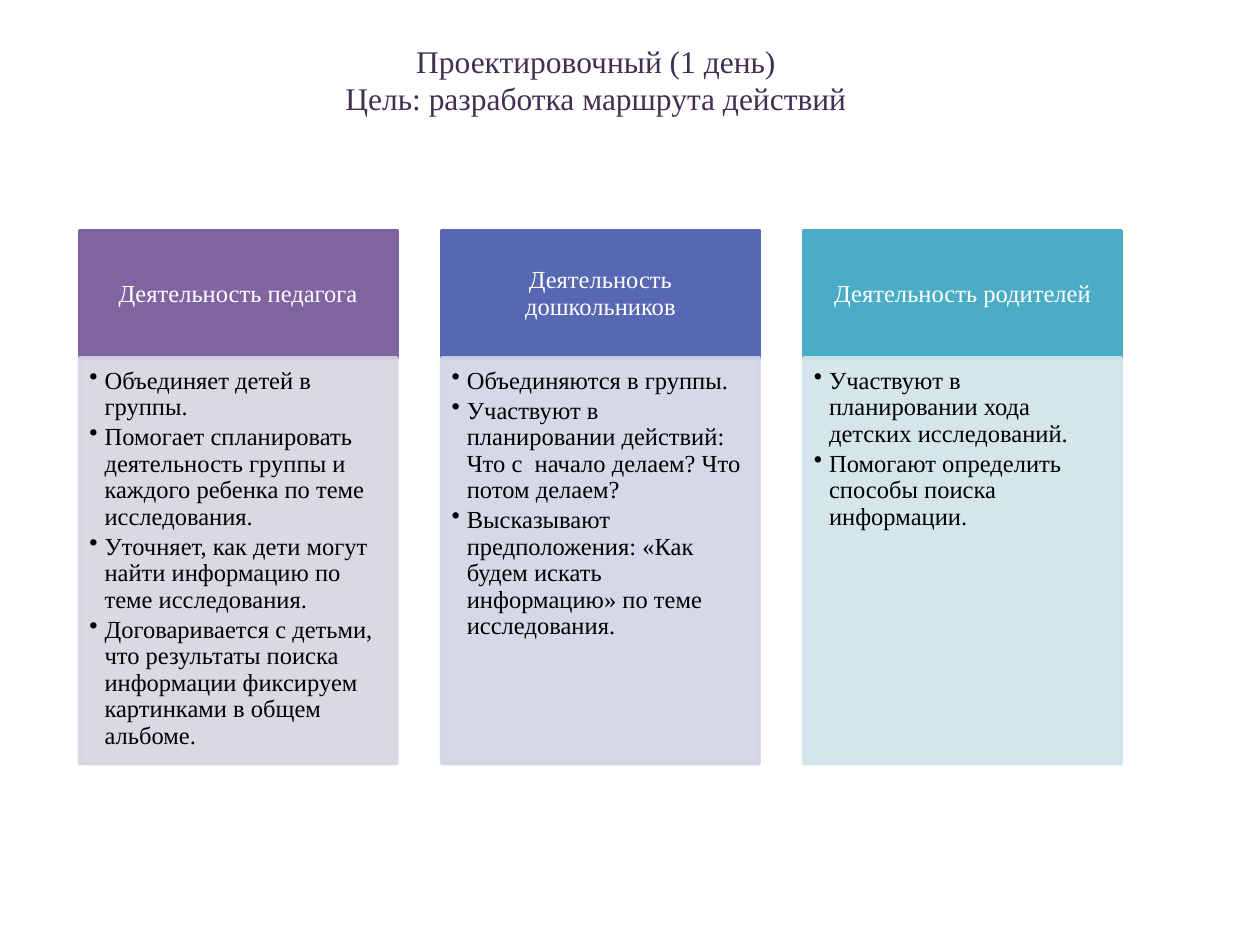
from lxml.etree import SubElement
from pptx import Presentation
from pptx.dml.color import RGBColor
from pptx.enum.shapes import MSO_SHAPE
from pptx.enum.text import MSO_ANCHOR, PP_ALIGN
from pptx.oxml.ns import qn
from pptx.util import Inches, Pt

COLORS = {
    "title": "403152", "white": "FFFFFF", "black": "000000",
    "purple": "8064A2", "lilac": "D8D3E0",
    "blue": "5767B4", "pale blue": "D1D4E5",
    "teal": "4BACC6", "pale teal": "D0E3EA",
}

COLUMNS = [
    ("Деятельность педагога", "purple", "lilac", [
        "Объединяет детей в группы.",
        "Помогает спланировать деятельность группы и каждого ребенка по теме исследования.",
        "Уточняет, как дети могут найти информацию по теме исследования.",
        "Договаривается с детьми, что результаты поиска информации фиксируем "
        "картинками в общем альбоме.",
    ]),
    ("Деятельность дошкольников", "blue", "pale blue", [
        "Объединяются в группы.",
        "Участвуют в планировании действий: Что с  начало делаем? Что потом делаем?",
        "Высказывают предположения: «Как будем искать информацию» по теме исследования.",
    ]),
    ("Деятельность родителей", "teal", "pale teal", [
        "Участвуют в планировании хода детских исследований.",
        "Помогают определить способы поиска информации.",
    ]),
]


class Deck:
    font = "Times New Roman"

    def __init__(self, slide):
        self.slide = slide

    def color(self, name):
        return RGBColor.from_string(COLORS[name])

    def style(self, para, size, color):
        for run in para.runs:
            run.font.name = self.font
            run.font.size = Pt(size)
            run.font.color.rgb = self.color(color)

    def frame(self, shape, anchor, insets):
        frame = shape.text_frame
        frame.word_wrap = True
        frame.vertical_anchor = anchor
        (frame.margin_left, frame.margin_top,
         frame.margin_right, frame.margin_bottom) = map(Inches, insets)
        return frame

    def title(self, box, text):
        shape = self.slide.shapes.add_textbox(*map(Inches, box))
        frame = self.frame(shape, MSO_ANCHOR.MIDDLE, (0.1, 0, 0.1, 0))
        para = frame.paragraphs[0]
        para.text = text
        para.alignment = PP_ALIGN.CENTER
        self.style(para, 18, "title")

    def block(self, box, color, alpha=100):
        shape = self.slide.shapes.add_shape(MSO_SHAPE.RECTANGLE, *map(Inches, box))
        shape.shadow.inherit = False
        shape.line.width = Pt(2)
        for fill in (shape.fill, shape.line.fill):
            fill.solid()
            fill.fore_color.rgb = self.color(color)
        if alpha < 100:
            for tint in shape.element.spPr.iter(qn("a:srgbClr")):
                SubElement(tint, qn("a:alpha"), val=str(alpha * 1000))
        return shape

    def header(self, box, text, color):
        shape = self.block(box, color)
        frame = self.frame(shape, MSO_ANCHOR.MIDDLE, (0.11, 0.06, 0.11, 0.06))
        para = frame.paragraphs[0]
        para.text = text
        para.alignment = PP_ALIGN.CENTER
        para.line_spacing = 0.9
        self.style(para, 14, "white")

    def bullets(self, box, items, color):
        shape = self.block(box, color, alpha=90)
        frame = self.frame(shape, MSO_ANCHOR.TOP, (0.08, 0.08, 0.11, 0.12))
        frame.text = "\n".join(items)
        for para in frame.paragraphs:
            props = para._p.get_or_add_pPr()
            props.set("marL", str(Inches(0.12)))
            props.set("indent", str(Inches(-0.12)))
            SubElement(props, qn("a:buChar"), char="•")
            para.alignment = PP_ALIGN.LEFT
            para.line_spacing = 0.9
            para.space_after = Pt(2)
            self.style(para, 14, "black")


def main():
    show = Presentation()
    show.slide_width, show.slide_height = Inches(10), Inches(7.5)
    deck = Deck(show.slides.add_slide(show.slide_layouts[6]))

    # Title
    deck.title((0.47, 0.32, 8.52, 0.62),
               "Проектировочный (1 день)\vЦель: разработка маршрута действий")

    # Three columns: header above its list
    first, last, width = 0.63, 6.38, 2.52
    top, head, body = 1.83, 1.01, 3.22
    step = (last - first) / (len(COLUMNS) - 1)
    for i, (name, dark, light, items) in enumerate(COLUMNS):
        left = first + i * step
        deck.header((left, top, width, head), name, dark)
        deck.bullets((left, top + head, width, body), items, light)

    show.save("out.pptx")


if __name__ == "__main__":
    main()
